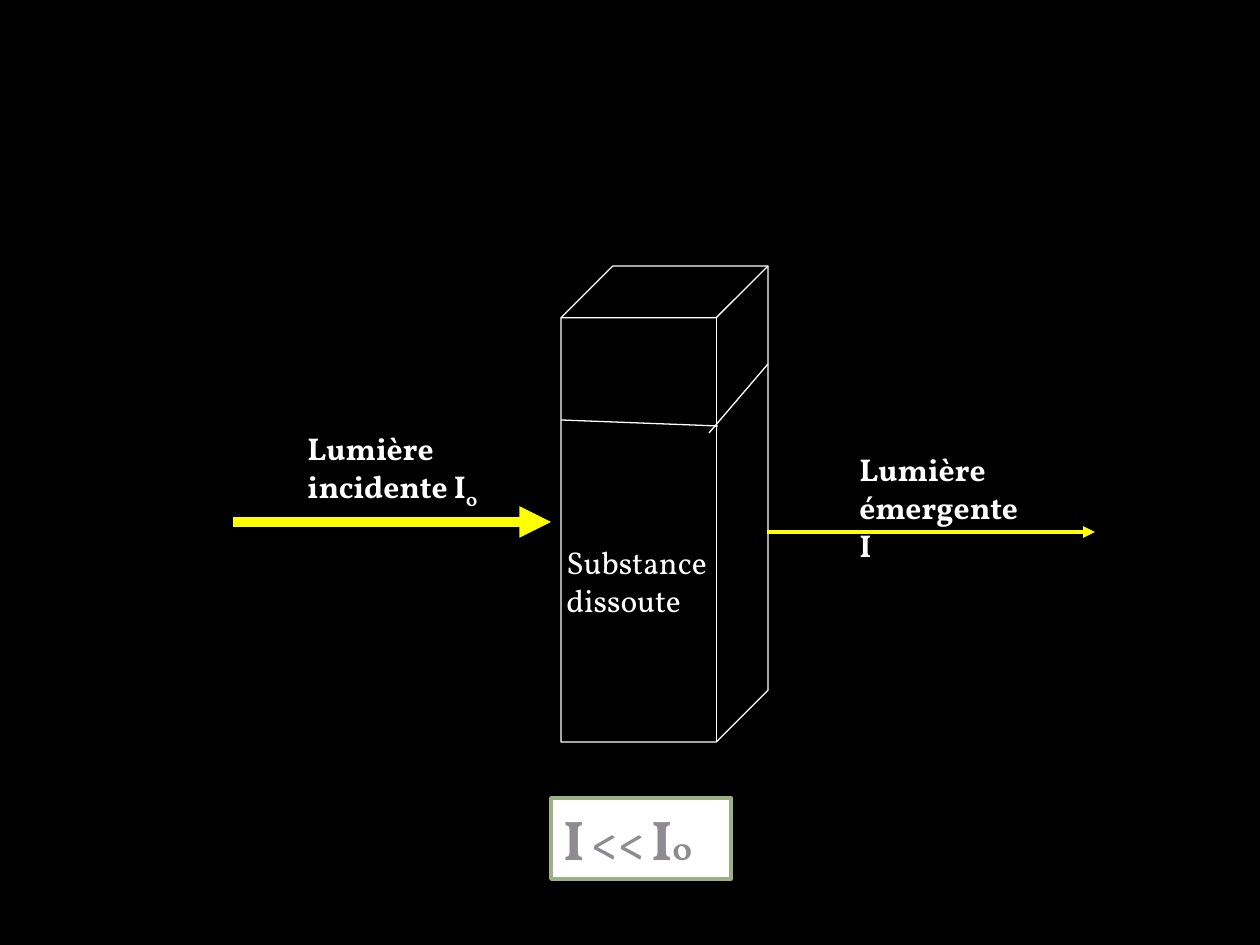
from lxml.etree import SubElement
from pptx import Presentation
from pptx.dml.color import RGBColor
from pptx.enum.shapes import MSO_CONNECTOR as Conn, MSO_SHAPE as Shape
from pptx.enum.text import MSO_ANCHOR as Anchor, MSO_AUTO_SIZE as Auto, PP_ALIGN as Align
from pptx.oxml.ns import qn
from pptx.util import Pt

PX = 914400 / 126
FONT = "Vollkorn"
HUES = {"back": "000000", "white": "FFFFFF", "beam": "FFFF00",
        "edge": "9CB084", "gray": "8E8C91", "rim": "C9BED5"}


def emu(*nums):
    return [round(n * PX) for n in nums]


def hue(name):
    return RGBColor.from_string(HUES[name])


def draw_line(slide, ends, color, width, arrow=False):
    line = slide.shapes.add_connector(Conn.STRAIGHT, *emu(*ends))
    line.line.color.rgb = hue(color)
    line.line.width = Pt(width)
    if arrow:
        SubElement(line.line._get_or_add_ln(), qn("a:tailEnd"), type="triangle")
    SubElement(line._element.spPr, qn("a:effectLst"))


def add_run(para, text, size=18, color="white", bold=False, base=0, rim=None):
    run = para.add_run()
    run.text = text
    font = run.font
    font.name, font.size, font.bold = FONT, Pt(size), bold
    font.color.rgb = hue(color)
    props = font._element
    if base:
        props.set("baseline", str(base * 1000))
    if rim:
        ln = props.makeelement(qn("a:ln"), {"w": str(Pt(1))})
        fill = SubElement(ln, qn("a:solidFill"))
        SubElement(fill, qn("a:srgbClr"), val=HUES[rim])
        props.insert(0, ln)


def set_frame(shape):
    frame = shape.text_frame
    frame.word_wrap = True
    frame.auto_size = Auto.SHAPE_TO_FIT_TEXT
    return frame


def add_label(slide, box, lines, bold=False):
    """Place a text box; each line is a list of (text, baseline) runs."""
    frame = set_frame(slide.shapes.add_textbox(*emu(*box)))
    for i, runs in enumerate(lines):
        para = frame.add_paragraph() if i else frame.paragraphs[0]
        for text, base in runs:
            add_run(para, text, bold=bold, base=base)


def draw_cell(slide, box):
    """Draw the glass cell with its liquid level and caption."""
    x, y, w, h = box
    cube = slide.shapes.add_shape(Shape.CUBE, *emu(*box))
    cube.shadow.inherit = False
    cube.adjustments[0] = 0.25
    cube.fill.background()
    cube.line.color.rgb = hue("white")
    cube.line.width = Pt(0.75)
    draw_line(slide, (x + w, y + 98, x + 148, y + 167), "white", 0.75)
    draw_line(slide, (x + 157, y + 160, x, y + 154), "white", 0.75)
    add_label(slide, (x - 7, y + 271, 168, 89),
              [[("Substance", 0)], [("dissoute", 0)]])


def draw_beam(slide, box, shift, runs, width):
    """Draw an arrow along the bottom of the box, with a label above it."""
    x, y, w, h = box
    draw_line(slide, (x, y + h, x + w, y + h), "beam", width, arrow=True)
    add_label(slide, (x + shift, y, 197, 89), [runs], bold=True)


def draw_result(slide, box):
    rect = slide.shapes.add_shape(Shape.RECTANGLE, *emu(*box))
    rect.shadow.inherit = False
    rect.fill.solid()
    rect.fill.fore_color.rgb = hue("white")
    rect.line.color.rgb = hue("edge")
    rect.line.width = Pt(2)
    frame = set_frame(rect)
    frame.vertical_anchor = Anchor.TOP
    para = frame.paragraphs[0]
    para.alignment = Align.LEFT
    for text, size in (("I", 32), (" ", 18), ("<<", 28), (" ", 18), ("I", 32), ("0", 18)):
        add_run(para, text, size, "gray", bold=True, rim="rim")


def main():
    deck = Presentation()
    deck.slide_width, deck.slide_height = emu(1260, 945)
    slide = deck.slides.add_slide(deck.slide_layouts[6])
    slide.background.fill.solid()
    slide.background.fill.fore_color.rgb = hue("back")
    draw_cell(slide, (561, 266, 207, 476))
    draw_beam(slide, (233, 423, 318, 99), 62,
              [("Lumière incidente I", 0), ("0", -25)], 6)
    draw_beam(slide, (767, 444, 328, 88), 80, [("Lumière émergente I", 0)], 2.25)
    draw_result(slide, (551, 798, 180, 81))
    deck.save("out.pptx")


if __name__ == "__main__":
    main()
